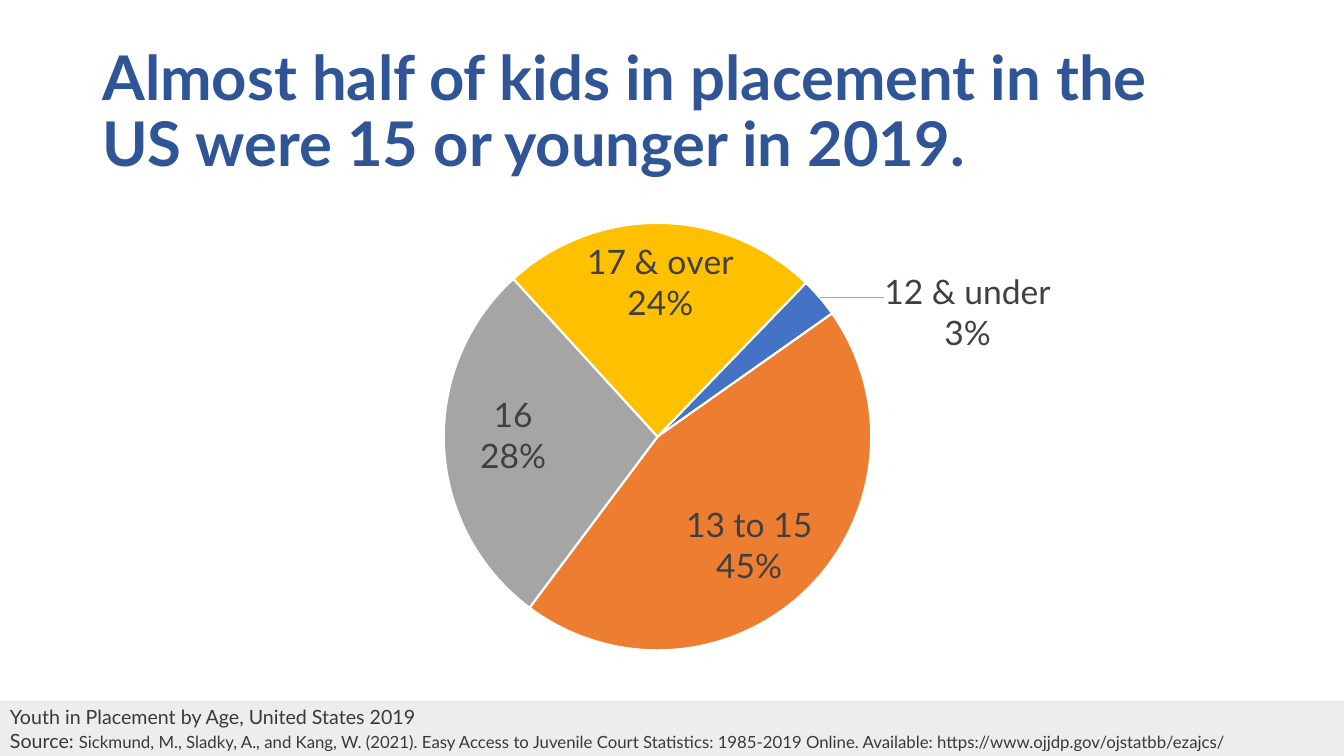
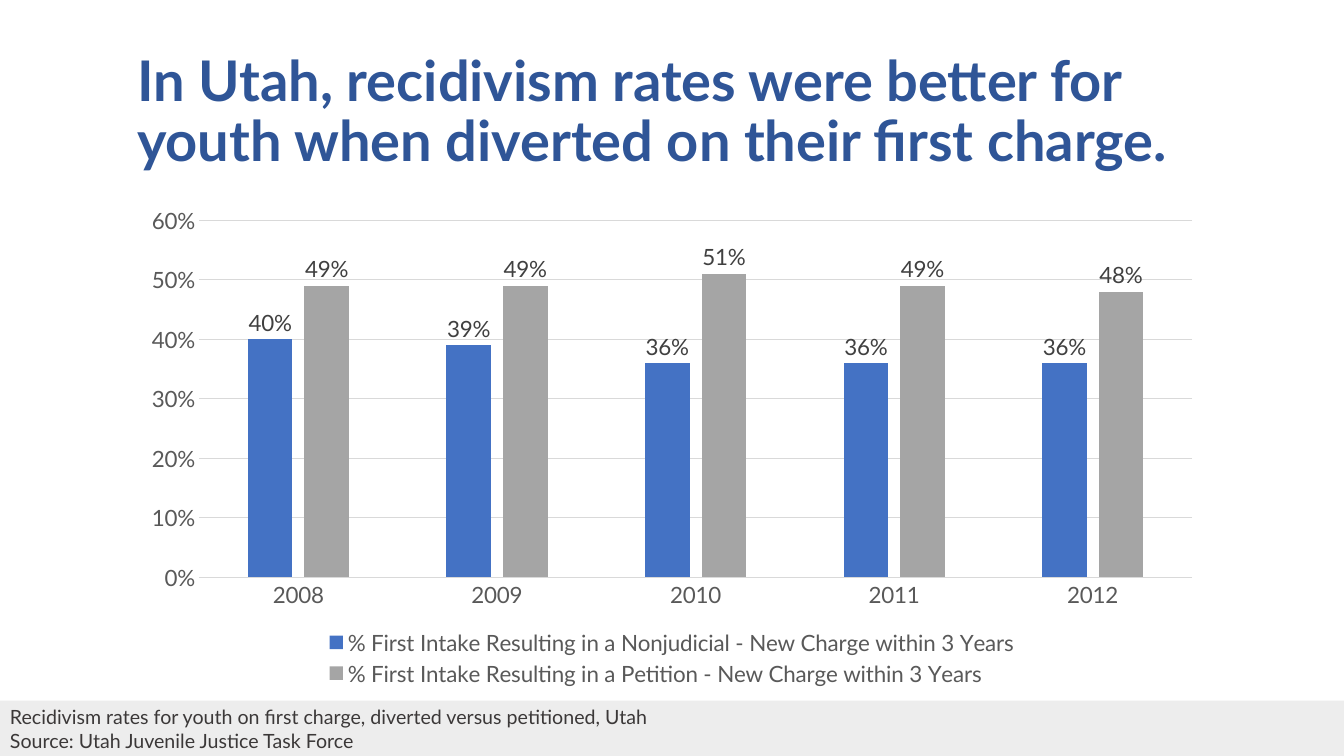
from copy import deepcopy
from lxml import etree
from pptx import Presentation
from pptx.chart.data import CategoryChartData
from pptx.dml.color import RGBColor
from pptx.enum.chart import XL_CHART_TYPE, XL_LABEL_POSITION, XL_LEGEND_POSITION, XL_TICK_MARK
from pptx.enum.shapes import MSO_SHAPE
from pptx.enum.text import MSO_ANCHOR, PP_ALIGN
from pptx.oxml import parse_xml
from pptx.util import Pt

PIE = XL_CHART_TYPE.PIE
COLUMN = XL_CHART_TYPE.COLUMN_CLUSTERED
IN_END = XL_LABEL_POSITION.INSIDE_END
OUT_END = XL_LABEL_POSITION.OUTSIDE_END
BOTTOM = XL_LEGEND_POSITION.BOTTOM
NO_TICK = XL_TICK_MARK.NONE
RECT = MSO_SHAPE.RECTANGLE
MIDDLE = MSO_ANCHOR.MIDDLE
LEFT = PP_ALIGN.LEFT

NAVY = RGBColor(0x2F, 0x55, 0x97)
BLUE = RGBColor(0x44, 0x72, 0xC4)
ORANGE = RGBColor(0xED, 0x7D, 0x31)
GRAY = RGBColor(0xA5, 0xA5, 0xA5)
GOLD = RGBColor(0xFF, 0xC0, 0x00)
WHITE = RGBColor(0xFF, 0xFF, 0xFF)
BAND = RGBColor(0xED, 0xED, 0xED)
RULE = RGBColor(0xD9, 0xD9, 0xD9)
INK = RGBColor(0x3B, 0x38, 0x38)
LABEL = RGBColor(0x40, 0x40, 0x40)
AXIS = RGBColor(0x59, 0x59, 0x59)
FACE = "Lato"
WIDE, HIGH = 960, 540
C = "{http://schemas.openxmlformats.org/drawingml/2006/chart}"
NS = ('xmlns:c="http://schemas.openxmlformats.org/drawingml/2006/chart" '
      'xmlns:a="http://schemas.openxmlformats.org/drawingml/2006/main"')


def style(font, size, color, bold=False):
    font.name = FACE
    font.size = Pt(size)
    font.bold = bold
    font.color.rgb = color


def layout(x, y, mode="", size=""):
    return parse_xml(
        f'<c:layout {NS}><c:manualLayout>{mode}'
        f'<c:x val="{x}"/><c:y val="{y}"/>{size}</c:manualLayout></c:layout>')


prs = Presentation()
prs.slide_width, prs.slide_height = Pt(WIDE), Pt(HIGH)

ages = CategoryChartData()
ages.categories = ["12 & under", "13 to 15", "16", "17 & over"]
ages.add_series("Series 1", [3, 45, 28, 24])

rates = CategoryChartData(number_format="0%")
rates.categories = ["2008", "2009", "2010", "2011", "2012"]
rates.add_series("% First Intake Resulting in a Nonjudicial - New Charge within 3 Years",
                 [0.4, 0.39, 0.36, 0.36, 0.36])
rates.add_series("% First Intake Resulting in a Petition - New Charge within 3 Years",
                 [0.49, 0.49, 0.51, 0.49, 0.48])

pages = [
    (PIE, ages, (124, 80.5, 715, 423.5), 20,
     "Almost half of kids in placement in the US were 15 or younger in 2019.", 66, 44,
     [[("Youth in Placement by Age, United States 2019", 14)],
      [("Source:\u00a0", 14),
       ("Sickmund, M., Sladky, A., and Kang, W. (2021). Easy Access to Juvenile Court Statistics: "
        "1985-2019 Online. Available: https://www.ojjdp.gov/ojstatbb/ezajcs/", 12)]]),
    (COLUMN, rates, (93, 141, 774, 352.5), 16,
     "In Utah, recidivism rates were better for youth when diverted on their first charge.", 91, 40,
     [[("Recidivism rates for youth on first charge, diverted versus petitioned, Utah", 14)],
      [("Source: Utah Juvenile Justice Task Force", 14)]]),
]

charts = []
for kind, data, area, size, head, left, big, notes in pages:
    slide = prs.slides.add_slide(prs.slide_layouts[6])
    chart = slide.shapes.add_chart(kind, *[Pt(n) for n in area], data).chart
    chart.has_title = False
    style(chart.font, size, AXIS)
    charts.append(chart)

    title = slide.shapes.add_textbox(Pt(left), Pt(29), Pt(894 - left), Pt(104)).text_frame
    title.word_wrap = True
    title.vertical_anchor = MIDDLE
    para = title.paragraphs[0]
    para.text = head
    para.line_spacing = 0.9
    style(para.font, big, NAVY, True)

    band = slide.shapes.add_shape(RECT, 0, Pt(500.5), Pt(WIDE), Pt(40))
    band.shadow.inherit = False
    band.fill.solid()
    band.fill.fore_color.rgb = BAND
    band.line.fill.background()
    frame = band.text_frame
    frame.vertical_anchor = MIDDLE
    for i, note in enumerate(notes):
        para = frame.add_paragraph() if i else frame.paragraphs[0]
        para.alignment = LEFT
        for text, size in note:
            run = para.add_run()
            run.text = text
            style(run.font, size, INK)

pie, bars = charts

pie.has_legend = False
plot = pie.plots[0]
plot.vary_by_categories = True
series = plot.series[0]
for i, color in enumerate([BLUE, ORANGE, GRAY, GOLD]):
    wedge = series.points[i].format
    wedge.fill.solid()
    wedge.fill.fore_color.rgb = color
    wedge.line.color.rgb = WHITE
    wedge.line.width = Pt(1.5)
labels = series.data_labels
style(labels.font, 24, LABEL)
labels.number_format = "0%"
labels.number_format_is_linked = False
labels.position = IN_END
labels.show_value = False
labels.show_category_name = True
labels.show_percentage = True

tree = pie.element
group = tree.find(f".//{C}ser/{C}dLbls")
lead = group.find(f"{C}showLeaderLines")
if lead is None:
    lead = etree.SubElement(group, f"{C}showLeaderLines")
lead.set("val", "1")
gap = etree.Element(f"{C}separator")
gap.text = "\n"
lead.addprevious(gap)
parts = [part for part in group if part is not lead]
lead.addnext(parse_xml(
    f'<c:leaderLines {NS}><c:spPr><a:ln w="9525"><a:solidFill><a:srgbClr val="{GRAY}"/>'
    '</a:solidFill></a:ln></c:spPr></c:leaderLines>'))
spots = [("outEnd", 0.06, 0.1), ("inEnd", 0.01, 0), ("inEnd", 0.03, -0.02), ("inEnd", 0, 0.02)]
for i, (place, x, y) in enumerate(spots):
    label = etree.Element(f"{C}dLbl")
    etree.SubElement(label, f"{C}idx").set("val", str(i))
    label.append(layout(x, y))
    label.extend(deepcopy(parts))
    label.find(f"{C}dLblPos").set("val", place)
    group.insert(i, label)

area = tree.find(f".//{C}plotArea")
old = area.find(f"{C}layout")
if old is not None:
    area.remove(old)
area.insert(0, layout(
    0.27, 0.177,
    '<c:layoutTarget val="inner"/><c:xMode val="edge"/><c:yMode val="edge"/>',
    '<c:w val="0.427"/><c:h val="0.739"/>'))
disc = area.find(f"{C}pieChart")
turn = disc.find(f"{C}firstSliceAng")
if turn is None:
    turn = etree.SubElement(disc, f"{C}firstSliceAng")
turn.set("val", "44")

bars.has_legend = True
bars.legend.position = BOTTOM
bars.legend.include_in_layout = False
style(bars.legend.font, 16, AXIS)
plot = bars.plots[0]
plot.vary_by_categories = False
plot.gap_width = 219
plot.overlap = -27
for series, color in zip(plot.series, [BLUE, GRAY]):
    series.format.fill.solid()
    series.format.fill.fore_color.rgb = color
    labels = series.data_labels
    labels.show_value = True
    labels.position = OUT_END
    labels.number_format = "0%"
    labels.number_format_is_linked = False
    style(labels.font, 16, LABEL)

years, scale = bars.category_axis, bars.value_axis
for axis in (years, scale):
    axis.major_tick_mark = NO_TICK
    axis.minor_tick_mark = NO_TICK
    style(axis.tick_labels.font, 16, AXIS)
scale.minimum_scale, scale.maximum_scale, scale.major_unit = 0, 0.6, 0.1
scale.tick_labels.number_format = "0%"
scale.tick_labels.number_format_is_linked = False
scale.format.line.fill.background()
scale.has_major_gridlines = True
for line in (years.format.line, scale.major_gridlines.format.line):
    line.color.rgb = RULE
    line.width = Pt(0.75)

prs.save("out.pptx")
